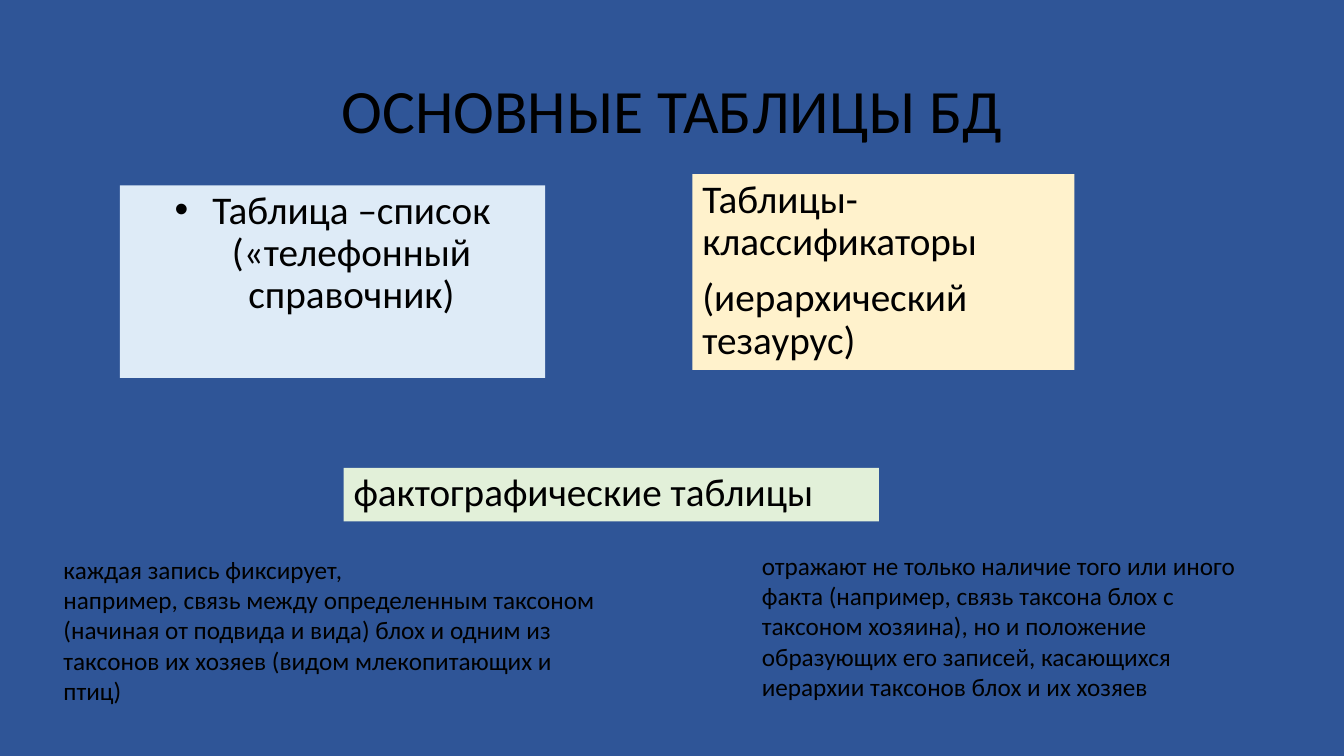
"""Build the slide on the main tables of the database."""
from lxml import etree
from pptx import Presentation
from pptx.dml.color import RGBColor
from pptx.enum import text
from pptx.oxml import ns
from pptx.util import Cm, Pt

BLUE = RGBColor(0x2F, 0x55, 0x97)
PALE_BLUE = RGBColor(0xDE, 0xEB, 0xF7)
PALE_YELLOW = RGBColor(0xFF, 0xF2, 0xCC)
PALE_GREEN = RGBColor(0xE2, 0xF0, 0xD9)
BLACK = RGBColor(0, 0, 0)
LEFT, CENTER = text.PP_ALIGN.LEFT, text.PP_ALIGN.CENTER


def place(shape, left, top, width, height, fill=None):
    shape.left, shape.top = Cm(left), Cm(top)
    shape.width, shape.height = Cm(width), Cm(height)
    if fill is not None:
        shape.fill.solid()
        shape.fill.fore_color.rgb = fill


def write(shape, lines, size, alignment=LEFT, line_spacing=1.0, gap=0):
    frame = shape.text_frame
    frame.word_wrap = True
    frame.auto_size = text.MSO_AUTO_SIZE.NONE
    frame.text = "\n".join(lines)
    for index, paragraph in enumerate(frame.paragraphs):
        paragraph.alignment = alignment
        paragraph.line_spacing = line_spacing
        paragraph.space_before = Pt(gap if index else 0)
        paragraph.font.size = Pt(size)
        paragraph.font.name = "Calibri"
        paragraph.font.color.rgb = BLACK


presentation = Presentation()
presentation.slide_width = Cm(33.87)
presentation.slide_height = Cm(19.05)
slide = presentation.slides.add_slide(presentation.slide_layouts[1])
slide.background.fill.solid()
slide.background.fill.fore_color.rgb = BLUE

title = slide.shapes.title
place(title, 2.34, 1.02, 29.21, 3.68)
write(title, ["ОСНОВНЫЕ ТАБЛИЦЫ БД"], 44, CENTER, 0.9)
title.text_frame.vertical_anchor = text.MSO_ANCHOR.MIDDLE

list_table = slide.placeholders[1]
place(list_table, 3.02, 4.67, 10.72, 4.85, PALE_BLUE)
list_table.text_frame.text = ""
properties = list_table.text_frame.paragraphs[0]._p.get_or_add_pPr()
properties.set("marL", "0")
properties.set("indent", "0")
etree.SubElement(properties, ns.qn("a:buNone"))
write(list_table, ["Таблица –список («телефонный справочник)"], 28, CENTER, 0.9)

text_boxes = [
    (["Таблицы-классификаторы", "(иерархический тезаурус)"],
     (17.45, 4.39, 9.63, 4.93), PALE_YELLOW, 28, 0.9, 10),
    (["фактографические таблицы"],
     (8.66, 11.79, 13.49, 1.35), PALE_GREEN, 28, 0.9, 0),
    (["каждая запись фиксирует,",
      "например, связь между определенным таксоном (начиная от подвида и вида) "
      "блох и одним из таксонов их хозяев (видом млекопитающих и птиц)"],
     (1.35, 13.84, 14.27, 4.11), None, 18, 1.0, 0),
    (["отражают не только наличие того или иного факта (например, связь таксона "
      "блох с таксоном хозяина), но и положение образующих его записей, "
      "касающихся иерархии таксонов блох и их хозяев"],
     (18.95, 13.74, 13.21, 4.11), None, 18, 1.0, 0),
]
for lines, position, fill, size, line_spacing, gap in text_boxes:
    text_box = slide.shapes.add_textbox(0, 0, 0, 0)
    place(text_box, *position, fill)
    write(text_box, lines, size, LEFT, line_spacing, gap)

presentation.save("out.pptx")
